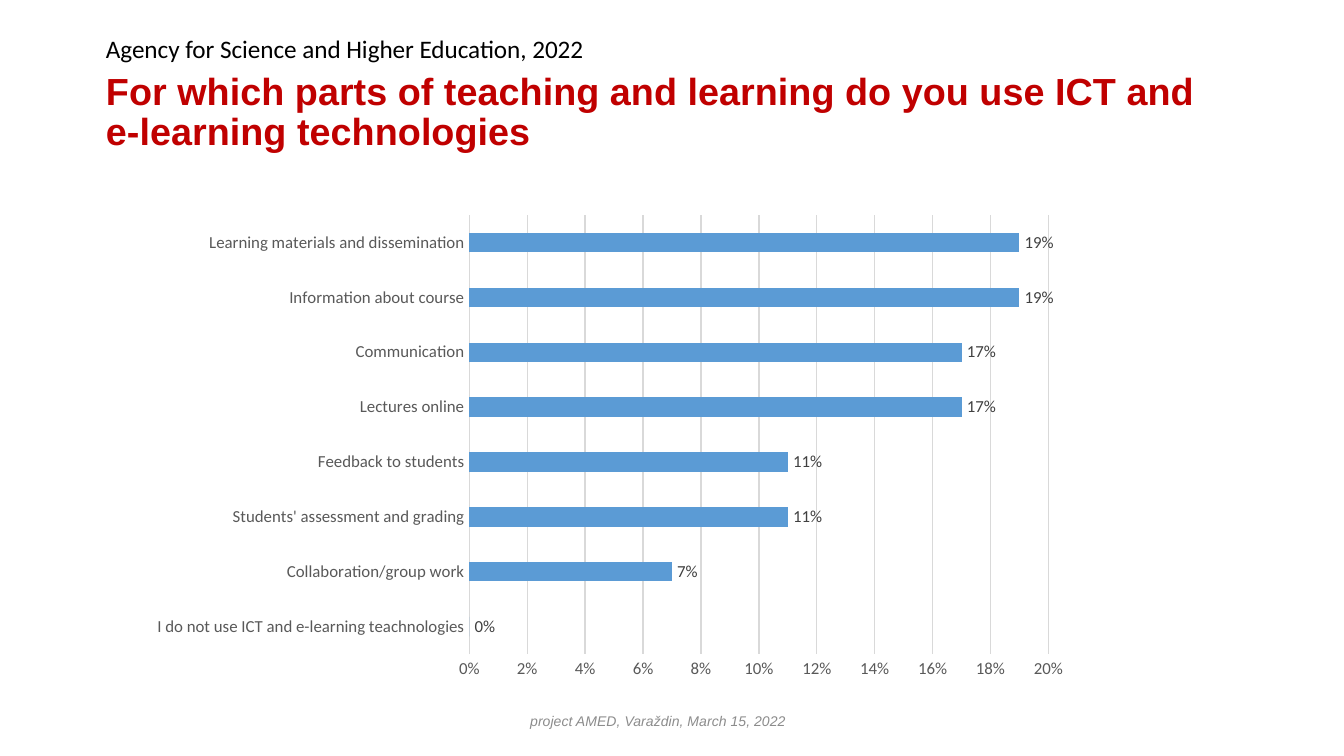
from pptx import Presentation
from pptx.chart.data import CategoryChartData
from pptx.dml.color import RGBColor
from pptx.enum.chart import XL_CHART_TYPE as CHART, XL_LABEL_POSITION as LABEL_POS
from pptx.enum.chart import XL_TICK_MARK as TICK
from pptx.enum.text import MSO_ANCHOR as ANCHOR, PP_ALIGN as ALIGN
from pptx.util import Inches, Pt

RED = RGBColor(0xC0, 0x00, 0x00)
BLACK = RGBColor(0x00, 0x00, 0x00)
GRAY = RGBColor(0x8C, 0x8C, 0x8C)
AXIS_TEXT = RGBColor(0x59, 0x59, 0x59)
LABEL_TEXT = RGBColor(0x40, 0x40, 0x40)
GRID = RGBColor(0xD9, 0xD9, 0xD9)
BLUE = RGBColor(0x5B, 0x9B, 0xD5)

WIDTH = Inches(10)
HEIGHT = WIDTH * 9 // 16

USES = {
    "I do not use ICT and e-learning teachnologies": 0,
    "Collaboration/group work": 0.07,
    "Students' assessment and grading": 0.11,
    "Feedback to students": 0.11,
    "Lectures online": 0.17,
    "Communication": 0.17,
    "Information about course": 0.19,
    "Learning materials and dissemination": 0.19,
}


def area(left, top, width, height):
    """Turn percentages of the slide's size into lengths."""
    return [int(share * side / 100) for share, side in
            zip((left, top, width, height), (WIDTH, HEIGHT) * 2)]


def set_font(font, color, **values):
    font.color.rgb = color
    for name, value in values.items():
        setattr(font, name, value)


def add_text(slide, box, text, color, anchor=ANCHOR.TOP, align=ALIGN.LEFT,
             spacing=None, **font):
    tf = slide.shapes.add_textbox(*box).text_frame
    tf.word_wrap = True
    tf.vertical_anchor = anchor
    p = tf.paragraphs[0]
    p.alignment = align
    p.line_spacing = spacing
    r = p.add_run()
    r.text = text
    set_font(r.font, color, **font)


def add_header(slide, source_box, title_box):
    add_text(slide, title_box,
             "For which parts of teaching and learning do you use ICT and "
             "e-learning technologies", RED, anchor=ANCHOR.MIDDLE, spacing=0.9,
             name="Arial", size=Pt(20.25), bold=True)
    add_text(slide, source_box, "Agency for Science and Higher Education, 2022",
             BLACK, name="Calibri", size=Pt(13.5))


def add_uses_chart(slide, box):
    data = CategoryChartData(number_format="0%")
    data.categories = list(USES)
    data.add_series("Series 1", list(USES.values()))
    chart = slide.shapes.add_chart(CHART.BAR_CLUSTERED, *box, data).chart
    chart.has_legend = chart.has_title = False
    set_font(chart.font, BLACK, name="Calibri", size=Pt(10))

    cat_axis, val_axis = chart.category_axis, chart.value_axis
    for axis in (cat_axis, val_axis):
        axis.major_tick_mark = axis.minor_tick_mark = TICK.NONE
        set_font(axis.tick_labels.font, AXIS_TEXT, name="Calibri", size=Pt(9))
    val_axis.minimum_scale, val_axis.maximum_scale = 0, 0.2
    val_axis.major_unit = 0.02
    val_axis.tick_labels.number_format = "0%"
    val_axis.tick_labels.number_format_is_linked = False
    val_axis.format.line.fill.background()
    for line in (cat_axis.format.line, val_axis.major_gridlines.format.line):
        line.color.rgb = GRID
        line.width = Pt(0.75)

    plot = chart.plots[0]
    plot.gap_width = 182
    plot.vary_by_categories = False
    bars = plot.series[0]
    bars.format.fill.solid()
    bars.format.fill.fore_color.rgb = BLUE
    labels = bars.data_labels
    for name, value in {"show_value": True, "position": LABEL_POS.OUTSIDE_END,
                        "number_format": "0%",
                        "number_format_is_linked": False}.items():
        setattr(labels, name, value)
    set_font(labels.font, LABEL_TEXT, name="Calibri", size=Pt(9))


def add_footer(slide, box):
    add_text(slide, box, "project AMED, Varaždin, March 15, 2022", GRAY,
             anchor=ANCHOR.MIDDLE, align=ALIGN.CENTER,
             name="Arial", size=Pt(7.5), italic=True)


def main():
    prs = Presentation()
    prs.slide_width, prs.slide_height = WIDTH, HEIGHT
    s = prs.slides.add_slide(prs.slide_layouts[6])
    add_header(s, area(6.9, 3.6, 48.4, 5.9), area(6.9, 5.3, 85.8, 19.4))
    add_uses_chart(s, area(10.3, 27.2, 70.2, 63.9))
    add_footer(s, area(17.4, 92.7, 63.1, 5.3))
    prs.save("out.pptx")


if __name__ == "__main__":
    main()
